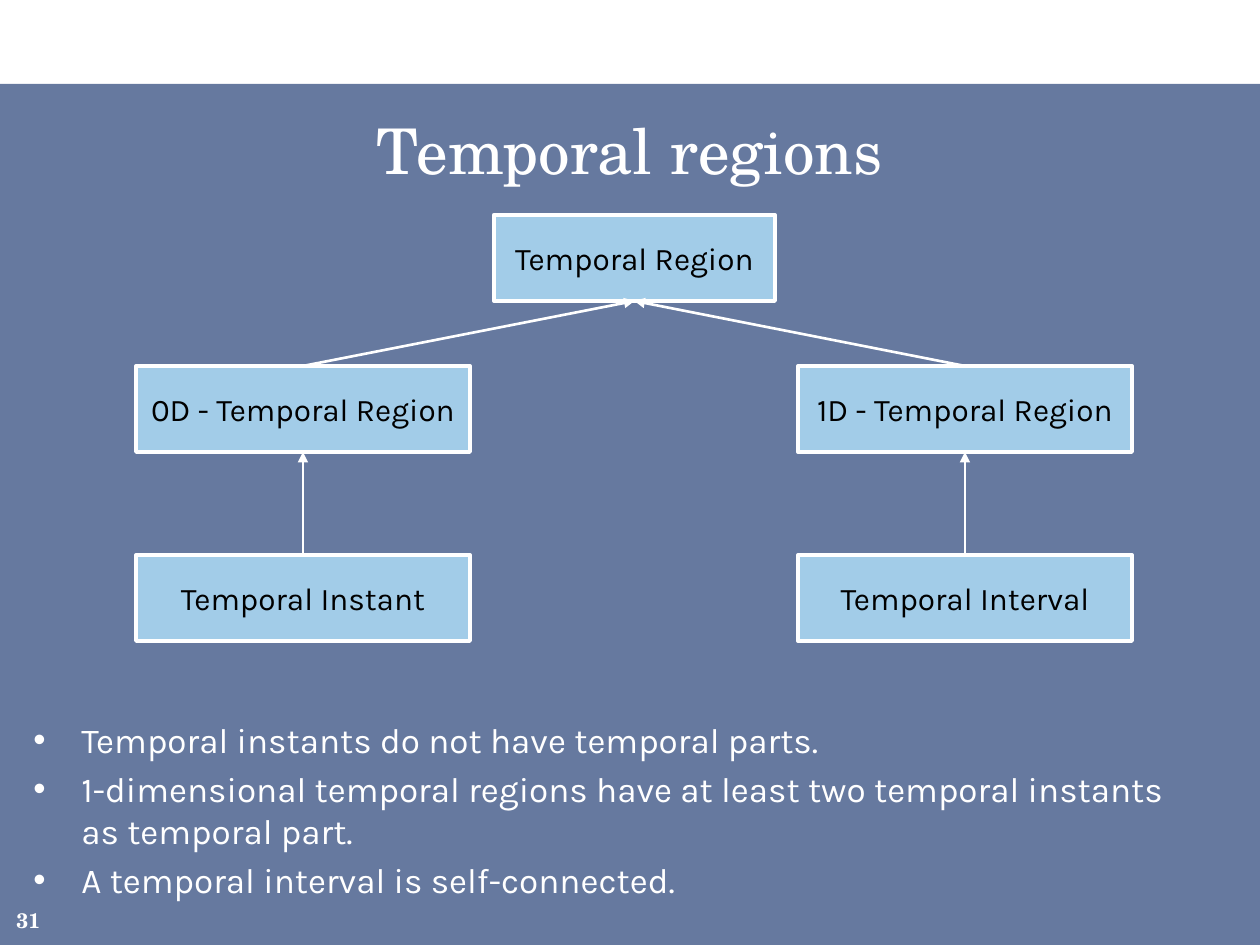
from lxml import etree
from pptx import Presentation
from pptx.dml.color import RGBColor
from pptx.enum.shapes import MSO_CONNECTOR as Connector, MSO_SHAPE as Shape
from pptx.enum.text import MSO_ANCHOR as Anchor, PP_ALIGN as Align
from pptx.oxml.ns import qn
from pptx.util import Emu, Pt

PX = 914400 // 126
WHITE, BLACK, BOX_BLUE, NAVY = "FFFFFF", "000000", "A2CCE8", "002060"
SANS, SERIF = "Karla", "TeX Gyre Schola"

TITLE = "Temporal regions"
PAGE_NUMBER = "31"
BULLETS = [
    "Temporal instants do not have temporal parts.",
    "1-dimensional temporal regions have at least two temporal instants as temporal part.",
    "A temporal interval is self-connected.",
]
ROOT = "Temporal Region"
BRANCHES = [
    ["0D - Temporal Region", "Temporal Instant"],
    ["1D - Temporal Region", "Temporal Interval"],
]
BOX_HEIGHT, ROOT_WIDTH, BRANCH_WIDTH = 86, 281, 334
ROOT_LEFT, ROOT_TOP = 494, 215
BRANCH_LEFTS, BRANCH_TOPS = (136, 798), (366, 555)


def px(*lengths):
    return [Emu(length * PX) for length in lengths]


def color(value):
    return RGBColor.from_string(value)


def write(shape, paragraphs, size, font=SANS, fill=WHITE, align=Align.LEFT,
          anchor=Anchor.TOP, wrap=True, bold=False, bullet=False, gap=0):
    frame = shape.text_frame
    frame.word_wrap = wrap
    frame.vertical_anchor = anchor
    for index, text in enumerate(paragraphs):
        paragraph = frame.add_paragraph() if index else frame.paragraphs[0]
        paragraph.alignment = align
        if index:
            paragraph.space_before = Pt(gap)
        if bullet:
            add_bullet(paragraph)
        run = paragraph.add_run()
        run.text = text
        run.font.size = Pt(size)
        run.font.name = font
        run.font.bold = bold
        run.font.color.rgb = color(fill)


def add_bullet(paragraph):
    properties = paragraph._p.get_or_add_pPr()
    properties.set("marL", str(48 * PX))
    properties.set("indent", str(-48 * PX))
    bullet_color = etree.SubElement(properties, qn("a:buClr"))
    etree.SubElement(bullet_color, qn("a:srgbClr"), val=WHITE)
    etree.SubElement(properties, qn("a:buFont"), typeface="Arial")
    etree.SubElement(properties, qn("a:buChar"), char="•")


def add_rectangle(slide, left, top, width, height, fill):
    shape = slide.shapes.add_shape(Shape.RECTANGLE, *px(left, top, width, height))
    shape.shadow.inherit = False
    shape.fill.solid()
    shape.fill.fore_color.rgb = color(fill)
    shape.line.fill.background()
    return shape


def add_region(slide, text, left, top, width):
    box = add_rectangle(slide, left, top, width, BOX_HEIGHT, BOX_BLUE)
    box.line.color.rgb = color(WHITE)
    box.line.width = Pt(2.25)
    write(box, [text], 18, fill=BLACK, align=Align.CENTER, anchor=Anchor.MIDDLE, wrap=False)
    return box


def add_arrow(slide, child, parent):
    arrow = slide.shapes.add_connector(Connector.STRAIGHT, 0, 0, 0, 0)
    arrow.begin_connect(child, 0)
    arrow.end_connect(parent, 2)
    arrow.line.color.rgb = color(WHITE)
    arrow.line.width = Pt(1.5)
    etree.SubElement(arrow.line._get_or_add_ln(), qn("a:tailEnd"), type="triangle")
    etree.SubElement(arrow._element.spPr, qn("a:effectLst"))


def add_text(slide, paragraphs, left, top, width, height, **style):
    write(slide.shapes.add_textbox(*px(left, top, width, height)), paragraphs, **style)


def main():
    presentation = Presentation()
    presentation.slide_width, presentation.slide_height = px(1260, 945)
    slide = presentation.slides.add_slide(presentation.slide_layouts[6])

    panel = add_rectangle(slide, 0, 84, 1260, 861, NAVY)
    panel_color = panel.fill._xPr.find(qn("a:solidFill"))[0]
    etree.SubElement(panel_color, qn("a:alpha"), val="60000")

    add_text(slide, BULLETS, 21, 712, 1197, 150, size=20, bullet=True, gap=4)
    add_text(slide, [PAGE_NUMBER], -10, 895, 63, 50, size=12, font=SERIF,
             align=Align.RIGHT, anchor=Anchor.MIDDLE, bold=True)
    add_text(slide, [TITLE], 31, 105, 1197, 105, size=36, font=SERIF, align=Align.CENTER)

    root = add_region(slide, ROOT, ROOT_LEFT, ROOT_TOP, ROOT_WIDTH)
    for left, names in zip(BRANCH_LEFTS, BRANCHES):
        parent = root
        for top, name in zip(BRANCH_TOPS, names):
            child = add_region(slide, name, left, top, BRANCH_WIDTH)
            add_arrow(slide, child, parent)
            parent = child

    presentation.save("out.pptx")


if __name__ == "__main__":
    main()
